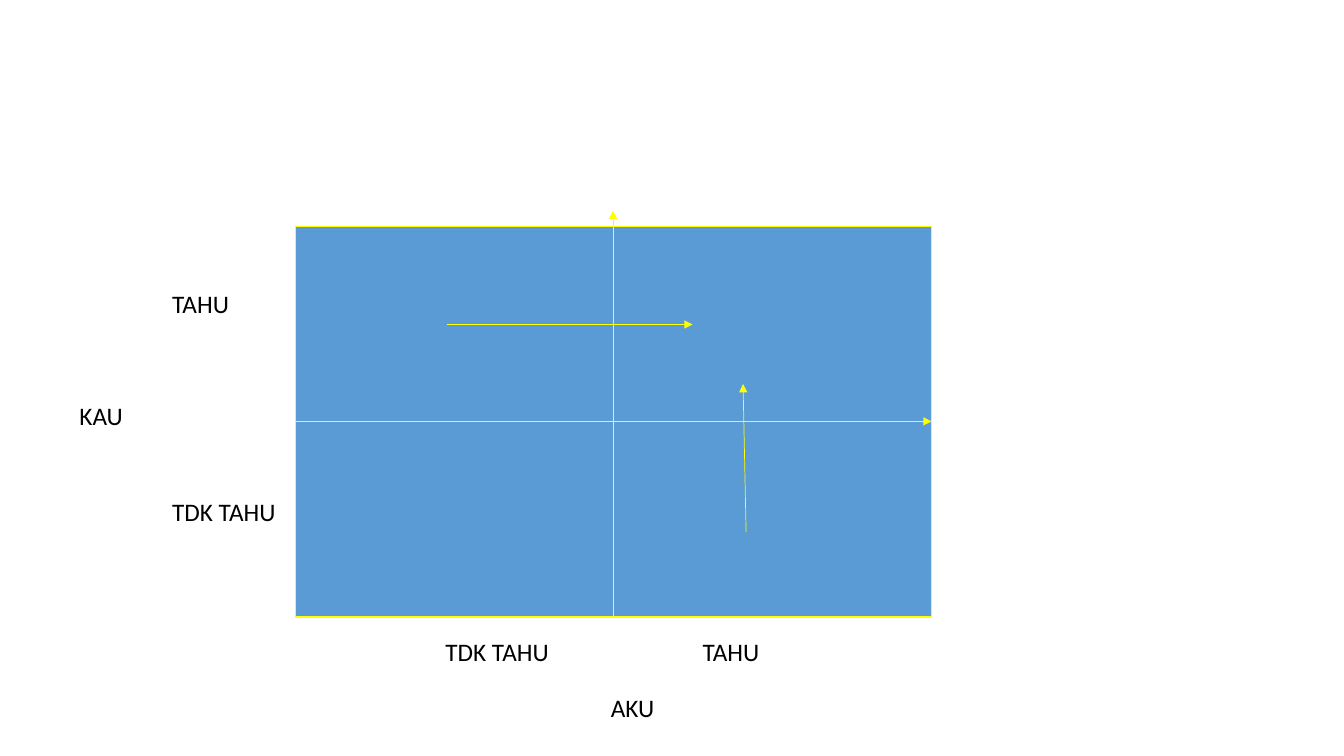
from dataclasses import dataclass

import lxml.etree
import pptx
import pptx.dml.color
import pptx.enum.shapes
import pptx.enum.text
import pptx.oxml.ns
import pptx.slide
import pptx.util

EMU_PER_PX = 9144  # 100 px to the inch


@dataclass(frozen=True)
class Theme:
    panel: str = "5B9BD5"
    accent: str = "FFFF00"
    ink: str = "000000"
    font: str = "Calibri"
    label_size: float = 18
    border_width: float = 1
    arrow_width: float = 0.5


@dataclass(frozen=True)
class Label:
    text: str
    left: int
    top: int
    width: int


@dataclass(frozen=True)
class Arrow:
    start: tuple[int, int]
    end: tuple[int, int]


THEME = Theme()
SLIDE_WIDTH, SLIDE_HEIGHT = 1333, 750
PANEL_LEFT, PANEL_TOP, PANEL_WIDTH, PANEL_HEIGHT = 293, 225, 631, 387
PANEL_RIGHT = PANEL_LEFT + PANEL_WIDTH
PANEL_BOTTOM = PANEL_TOP + PANEL_HEIGHT
CENTER_X = PANEL_LEFT + PANEL_WIDTH // 2
CENTER_Y = PANEL_TOP + PANEL_HEIGHT // 2
AXIS_OVERSHOOT = 16
LABEL_HEIGHT = 40
ROW_LABEL_LEFT = 161
COLUMN_LABEL_TOP = 626

AXES = [
    Arrow((PANEL_LEFT, CENTER_Y), (PANEL_RIGHT, CENTER_Y)),
    Arrow((CENTER_X, PANEL_BOTTOM), (CENTER_X, PANEL_TOP - AXIS_OVERSHOOT)),
]
LABELS = [
    Label("KAU", 69, 392, 64),
    Label("AKU", 596, 682, 64),
    Label("TDK TAHU", 432, COLUMN_LABEL_TOP, 124),
    Label("TAHU", 687, COLUMN_LABEL_TOP, 77),
    Label("TDK TAHU", ROW_LABEL_LEFT, 487, 124),
    Label("TAHU", ROW_LABEL_LEFT, 281, 77),
]
MOVES = [
    Arrow((443, 322), (687, 322)),
    Arrow((740, 528), (737, 381)),
]


def px(length: int) -> pptx.util.Emu:
    return pptx.util.Emu(length * EMU_PER_PX)


def color(value: str) -> pptx.dml.color.RGBColor:
    return pptx.dml.color.RGBColor.from_string(value)


def add_panel(slide: pptx.slide.Slide) -> None:
    panel = slide.shapes.add_shape(
        pptx.enum.shapes.MSO_SHAPE.RECTANGLE,
        px(PANEL_LEFT), px(PANEL_TOP), px(PANEL_WIDTH), px(PANEL_HEIGHT),
    )
    panel.shadow.inherit = False
    panel.fill.solid()
    panel.fill.fore_color.rgb = color(THEME.panel)
    panel.line.color.rgb = color(THEME.accent)
    panel.line.width = pptx.util.Pt(THEME.border_width)


def add_arrow(slide: pptx.slide.Slide, arrow: Arrow) -> None:
    connector = slide.shapes.add_connector(
        pptx.enum.shapes.MSO_CONNECTOR.STRAIGHT,
        *map(px, arrow.start), *map(px, arrow.end),
    )
    connector.line.color.rgb = color(THEME.accent)
    connector.line.width = pptx.util.Pt(THEME.arrow_width)
    properties = connector.element.spPr
    outline = properties.find(pptx.oxml.ns.qn("a:ln"))
    lxml.etree.SubElement(outline, pptx.oxml.ns.qn("a:tailEnd"), type="triangle")
    lxml.etree.SubElement(properties, pptx.oxml.ns.qn("a:effectLst"))


def add_label(slide: pptx.slide.Slide, label: Label) -> None:
    box = slide.shapes.add_textbox(
        px(label.left), px(label.top), px(label.width), px(LABEL_HEIGHT)
    )
    frame = box.text_frame
    frame.text = label.text
    frame.word_wrap = False
    frame.auto_size = pptx.enum.text.MSO_AUTO_SIZE.SHAPE_TO_FIT_TEXT
    font = frame.paragraphs[0].runs[0].font
    font.name = THEME.font
    font.size = pptx.util.Pt(THEME.label_size)
    font.color.rgb = color(THEME.ink)


def main() -> None:
    presentation = pptx.Presentation()
    presentation.slide_width = px(SLIDE_WIDTH)
    presentation.slide_height = px(SLIDE_HEIGHT)
    slide = presentation.slides.add_slide(presentation.slide_layouts[6])
    add_panel(slide)
    for axis in AXES:
        add_arrow(slide, axis)
    for label in LABELS:
        add_label(slide, label)
    for move in MOVES:
        add_arrow(slide, move)
    presentation.save("out.pptx")


if __name__ == "__main__":
    main()
